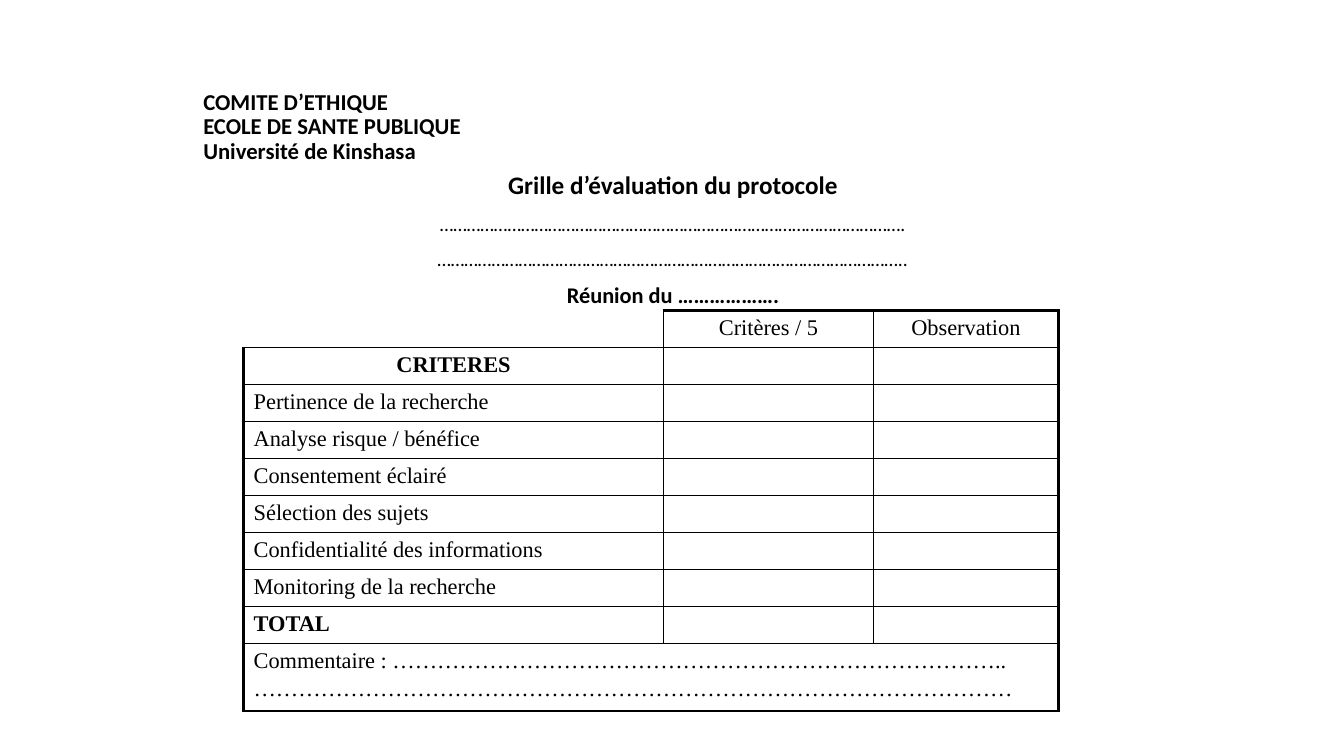
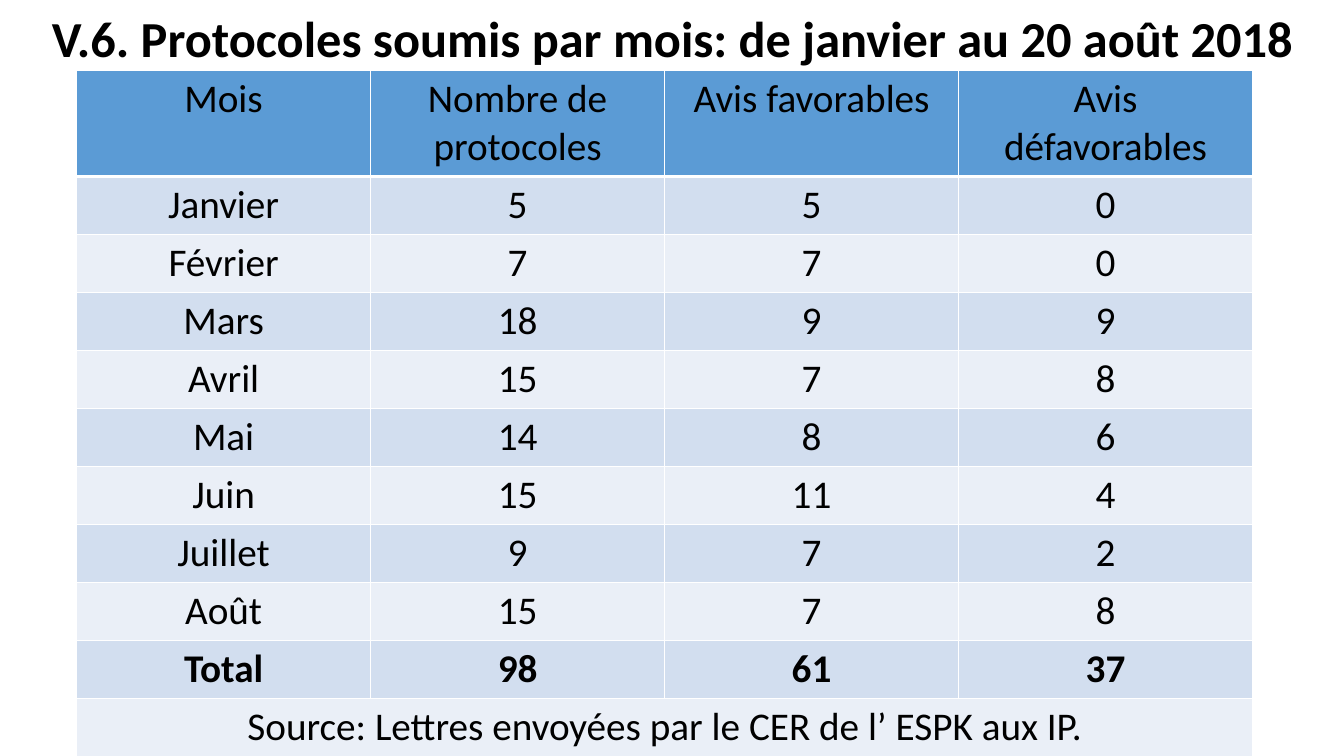
from dataclasses import dataclass
from typing import Callable, Optional

from lxml import etree
from pptx import Presentation
from pptx import util as u
from pptx.dml.color import RGBColor
from pptx.enum import text as t
from pptx.oxml import ns

PX = 9525  # EMU in one px
LEFT, MID = t.PP_ALIGN.LEFT, t.PP_ALIGN.CENTER


@dataclass(frozen=True)
class Theme:
    sans: str = "Calibri"
    serif: str = "Times New Roman"
    ink: str = "000000"
    paper: str = "FFFFFF"
    head: str = "5B9BD5"
    odd: str = "D2DEEF"
    even: str = "EAEFF7"
    org: float = 16.2
    title: float = 36
    form: float = 18
    dots: float = 14
    date: float = 16
    small: float = 16
    large: float = 28
    thin: float = 1
    thick: float = 2.25
    rule: float = 3
    lead: float = 0.9
    gap: float = 10
    tight: float = 2.4


T = Theme()


@dataclass(frozen=True)
class Box:
    left: int
    top: int
    width: int
    height: int

    def emu(self) -> tuple:
        return tuple(u.Emu(n * PX) for n in (self.left, self.top, self.width, self.height))


@dataclass(frozen=True)
class Line:
    words: str
    size: float
    bold: bool = False


@dataclass(frozen=True)
class Grid:
    """A table whose last row is one cell over the full width."""
    left: int
    top: int
    cols: list[int]
    rows: list[int]
    cells: list[list[str]]
    font: str
    size: float
    color: str  # of the borders
    bold: Callable[[int], bool]
    align: Callable[[int, int], int]
    fill: Callable[[int], Optional[str]]
    edges: Callable[[int, int], tuple]  # widths: left, right, top, bottom


# --- Text ---
def style(para, size: float, font: str, bold: bool, align: int) -> None:
    para.alignment = align
    para.font.size, para.font.name, para.font.bold = u.Pt(size), font, bold
    para.font.color.rgb = RGBColor.from_string(T.ink)


def add_title(slide, box: Box, words: str, size: float, align: int) -> None:
    shape = slide.shapes.title
    shape.left, shape.top, shape.width, shape.height = box.emu()
    frame = shape.text_frame
    frame.text = words
    frame.word_wrap = True
    frame.auto_size = t.MSO_AUTO_SIZE.NONE
    frame.vertical_anchor = t.MSO_ANCHOR.MIDDLE
    para = frame.paragraphs[0]
    para.line_spacing = T.lead
    style(para, size, T.sans, True, align)


def add_text(slide, box: Box, lines: list[Line]) -> None:
    frame = slide.shapes.add_textbox(*box.emu()).text_frame
    frame.word_wrap = True
    frame.text = "\n".join(line.words for line in lines)
    for i, (para, line) in enumerate(zip(frame.paragraphs, lines)):
        para.line_spacing = T.lead
        para.space_before = u.Pt(T.gap if i else 0)
        style(para, line.size, T.sans, line.bold, MID)


# --- Tables ---
def add_edges(cell, widths: tuple, color: str) -> None:
    props = cell._tc.get_or_add_tcPr()
    for i, (side, width) in enumerate(zip("LRTB", widths)):
        line = etree.Element(ns.qn(f"a:ln{side}"), w=str(u.Pt(width)))
        if width:
            fill = etree.SubElement(line, ns.qn("a:solidFill"))
            etree.SubElement(fill, ns.qn("a:srgbClr"), val=color)
        else:
            etree.SubElement(line, ns.qn("a:noFill"))
        props.insert(i, line)


def add_grid(slide, grid: Grid) -> None:
    box = Box(grid.left, grid.top, sum(grid.cols), sum(grid.rows))
    table = slide.shapes.add_table(len(grid.rows), len(grid.cols), *box.emu()).table
    table.first_row = table.horz_banding = False
    for col, width in zip(table.columns, grid.cols):
        col.width = u.Emu(width * PX)
    for row, height in zip(table.rows, grid.rows):
        row.height = u.Emu(height * PX)
    end = len(grid.rows) - 1
    table.cell(end, 0).merge(table.cell(end, len(grid.cols) - 1))
    for r in range(len(grid.rows)):
        for c in range(len(grid.cols)):
            cell = table.cell(r, c)
            cell.text = grid.cells[r][c] if c < len(grid.cells[r]) else ""
            for i, para in enumerate(cell.text_frame.paragraphs):
                para.space_before = u.Pt(T.tight if i else 0)
                style(para, grid.size, grid.font, grid.bold(r), grid.align(r, c))
            fill = grid.fill(r)
            if fill:
                cell.fill.solid()
                cell.fill.fore_color.rgb = RGBColor.from_string(fill)
            else:
                cell.fill.background()
            add_edges(cell, grid.edges(r, c), grid.color)


# --- Slide 1: evaluation form ---
CRITERIA = [
    ["", "Critères / 5", "Observation"],
    ["CRITERES"],
    ["Pertinence de la recherche"],
    ["Analyse risque / bénéfice"],
    ["Consentement éclairé"],
    ["Sélection des sujets"],
    ["Confidentialité des informations"],
    ["Monitoring de la recherche"],
    ["TOTAL"],
    ["Commentaire : ………………………………………………………………………..\n"
     "…………………………………………………………………………………………"],
]


def form_edges(r: int, c: int) -> tuple:
    end = len(CRITERIA) - 1
    corner = r == c == 0
    outer = 0 if corner else T.thick
    return (
        T.thin if c else outer,
        T.thick if c == 2 or r == end else T.thin,
        T.thin if r else outer,
        T.thick if r == end else T.thin,
    )


def add_form(slide) -> None:
    add_title(slide, Box(184, 80, 923, 83),
              "COMITE D’ETHIQUE\vECOLE DE SANTE PUBLIQUE\vUniversité de Kinshasa", T.org, LEFT)
    add_text(slide, Box(174, 160, 934, 434), [
        Line("Grille d’évaluation du protocole", T.form, True),
        Line("………………………………………………………………………………………….", T.dots),
        Line("…………………………………………………………………………………………..", T.dots),
        Line("Réunion du ……………….", T.date, True),
    ])
    add_grid(slide, Grid(
        232, 296, [400, 200, 176], [33] * 3 + [35] * 6 + [61], CRITERIA,
        T.serif, T.small, T.ink,
        bold=lambda r: r in (1, 8),
        align=lambda r, c: MID if r < 2 else LEFT,
        fill=lambda r: None,
        edges=form_edges,
    ))


# --- Slide 2: protocols by month ---
MONTHS = [
    ("Janvier", 5, 5, 0),
    ("Février", 7, 7, 0),
    ("Mars", 18, 9, 9),
    ("Avril", 15, 7, 8),
    ("Mai", 14, 8, 6),
    ("Juin", 15, 11, 4),
    ("Juillet", 9, 7, 2),
    ("Août", 15, 7, 8),
    ("Total", 98, 61, 37),
]


def add_months(slide) -> None:
    add_title(slide, Box(9, 11, 1264, 56),
              "V.6. Protocoles soumis par mois: de janvier au 20 août 2018", T.title, MID)
    cells = [["Mois", "Nombre de protocoles", "Avis favorables", "Avis défavorables"]]
    cells += [[str(item) for item in month] for month in MONTHS]
    cells += [["Source: Lettres envoyées par le CER de l’ ESPK aux IP."]]
    add_grid(slide, Grid(
        73, 67, [280] * 4, [101] + [55] * 10, cells,
        T.sans, T.large, T.paper,
        bold=lambda r: r == len(MONTHS),
        align=lambda r, c: MID,
        fill=lambda r: (T.odd if r % 2 else T.even) if r else T.head,
        edges=lambda r, c: (T.thin,) * 3 + (T.thin if r else T.rule,),
    ))


def main() -> None:
    deck = Presentation()
    deck.slide_width, deck.slide_height = u.Emu(1280 * PX), u.Emu(720 * PX)
    only = deck.slide_layouts.get_by_name("Title Only")
    for draw in (add_form, add_months):
        draw(deck.slides.add_slide(only))
    deck.save("out.pptx")


if __name__ == "__main__":
    main()
